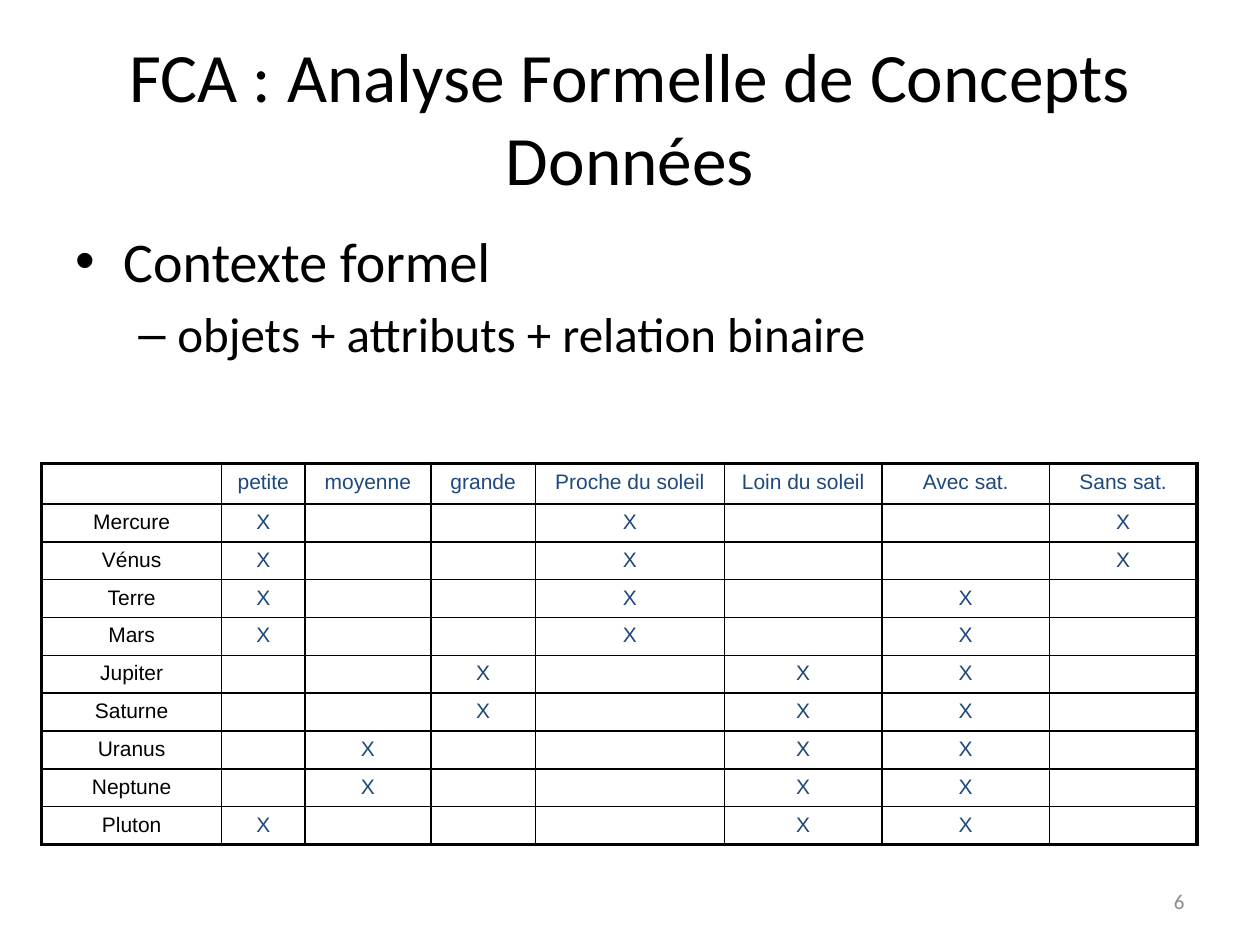
from lxml.etree import SubElement
from pptx import Presentation
from pptx.dml.color import RGBColor
from pptx.enum.text import MSO_ANCHOR as Anchor, PP_ALIGN as Align
from pptx.oxml.ns import qn
from pptx.util import Inches, Pt

BLACK, WHITE, NAVY, GREY = "000000", "FFFFFF", "1F497D", "8C8C8C"
THIN, THICK = 1, 2.25
HEADERS = ["", "petite", "moyenne", "grande", "Proche du soleil",
           "Loin du soleil", "Avec sat.", "Sans sat."]
COLUMN_WIDTHS = [1.43, 0.66, 1, 0.83, 1.5, 1.25, 1.33, 1.17]
HEADER_HEIGHT, ROW_HEIGHT = 0.32, 0.26
PLANETS = {
    "Mercure": ["petite", "Proche du soleil", "Sans sat."],
    "Vénus": ["petite", "Proche du soleil", "Sans sat."],
    "Terre": ["petite", "Proche du soleil", "Avec sat."],
    "Mars": ["petite", "Proche du soleil", "Avec sat."],
    "Jupiter": ["grande", "Loin du soleil", "Avec sat."],
    "Saturne": ["grande", "Loin du soleil", "Avec sat."],
    "Uranus": ["moyenne", "Loin du soleil", "Avec sat."],
    "Neptune": ["moyenne", "Loin du soleil", "Avec sat."],
    "Pluton": ["petite", "Loin du soleil", "Avec sat."],
}


def rgb(value):
    return RGBColor.from_string(value)


def write(para, text, size=12, font="Calibri", color=BLACK, align=Align.LEFT):
    para.alignment = align
    for index, line in enumerate(text.split("\n")):
        if index:
            para.add_line_break()
        if line:
            span = para.add_run()
            span.text = line
            span.font.size = Pt(size)
            span.font.name = font
            span.font.color.rgb = rgb(color)
    if not text:
        SubElement(para._p, qn("a:endParaRPr"), sz=str(size * 100))


def add_box(page, left, top, width, height, anchor=Anchor.TOP):
    box = page.shapes.add_textbox(Inches(left), Inches(top), Inches(width), Inches(height))
    frame = box.text_frame
    frame.word_wrap = True
    frame.vertical_anchor = anchor
    return frame


def set_bullet(para, symbol, indent, hanging, size):
    para.space_before = Pt(size * 0.2)
    properties = para._p.get_or_add_pPr()
    properties.set("marL", str(Inches(indent)))
    properties.set("indent", str(-Inches(hanging)))
    SubElement(properties, qn("a:buFont"), typeface="Arial")
    SubElement(properties, qn("a:buChar"), char=symbol)


def set_borders(cell, widths):
    properties = cell._tc.get_or_add_tcPr()
    for side, width in widths.items():
        line = SubElement(properties, qn(f"a:ln{side}"), w=str(Pt(width)))
        fill = SubElement(line, qn("a:solidFill"))
        SubElement(fill, qn("a:srgbClr"), val=BLACK)


def add_context_table(page, left, top):
    marks = [[name] + ["X" if header in traits else "" for header in HEADERS[1:]]
             for name, traits in PLANETS.items()]
    rows = [HEADERS] + marks
    heights = [HEADER_HEIGHT] + [ROW_HEIGHT] * len(marks)
    table = page.shapes.add_table(
        len(rows), len(HEADERS), Inches(left), Inches(top),
        Inches(sum(COLUMN_WIDTHS)), Inches(sum(heights))).table
    table.first_row = table.horz_banding = False
    for column, width in zip(table.columns, COLUMN_WIDTHS):
        column.width = Inches(width)
    last_row, last_column = len(rows) - 1, len(HEADERS) - 1
    for r, row in enumerate(rows):
        table.rows[r].height = Inches(heights[r])
        for c, text in enumerate(row):
            cell = table.cell(r, c)
            write(cell.text_frame.paragraphs[0], text, font="Arial",
                  color=NAVY if c else BLACK, align=Align.CENTER)
            outer = {"L": c == 0, "R": c == last_column, "T": r == 0, "B": r == last_row}
            set_borders(cell, {side: THICK if edge else THIN for side, edge in outer.items()})
            cell.fill.solid()
            cell.fill.fore_color.rgb = rgb(WHITE)


def main():
    deck = Presentation()
    deck.slide_width, deck.slide_height = Inches(10), Inches(7.5)
    page = deck.slides.add_slide(deck.slide_layouts[6])

    title = add_box(page, 0.5, 0.3, 9, 1.25, Anchor.MIDDLE)
    write(title.paragraphs[0], "FCA : Analyse Formelle de Concepts\nDonnées",
          size=39.6, align=Align.CENTER)

    body = add_box(page, 0.5, 1.75, 9, 4.95)
    topic = body.paragraphs[0]
    write(topic, "Contexte formel", size=32)
    set_bullet(topic, "•", 0.38, 0.38, 32)
    detail = body.add_paragraph()
    detail.level = 1
    write(detail, "objets + attributs + relation binaire", size=28)
    set_bullet(detail, "–", 0.81, 0.31, 28)

    add_context_table(page, 0.33, 3.68)

    number = add_box(page, 7.17, 6.95, 2.33, 0.4, Anchor.MIDDLE)
    write(number.paragraphs[0], "6", color=GREY, align=Align.RIGHT)
    deck.save("out.pptx")


if __name__ == "__main__":
    main()
